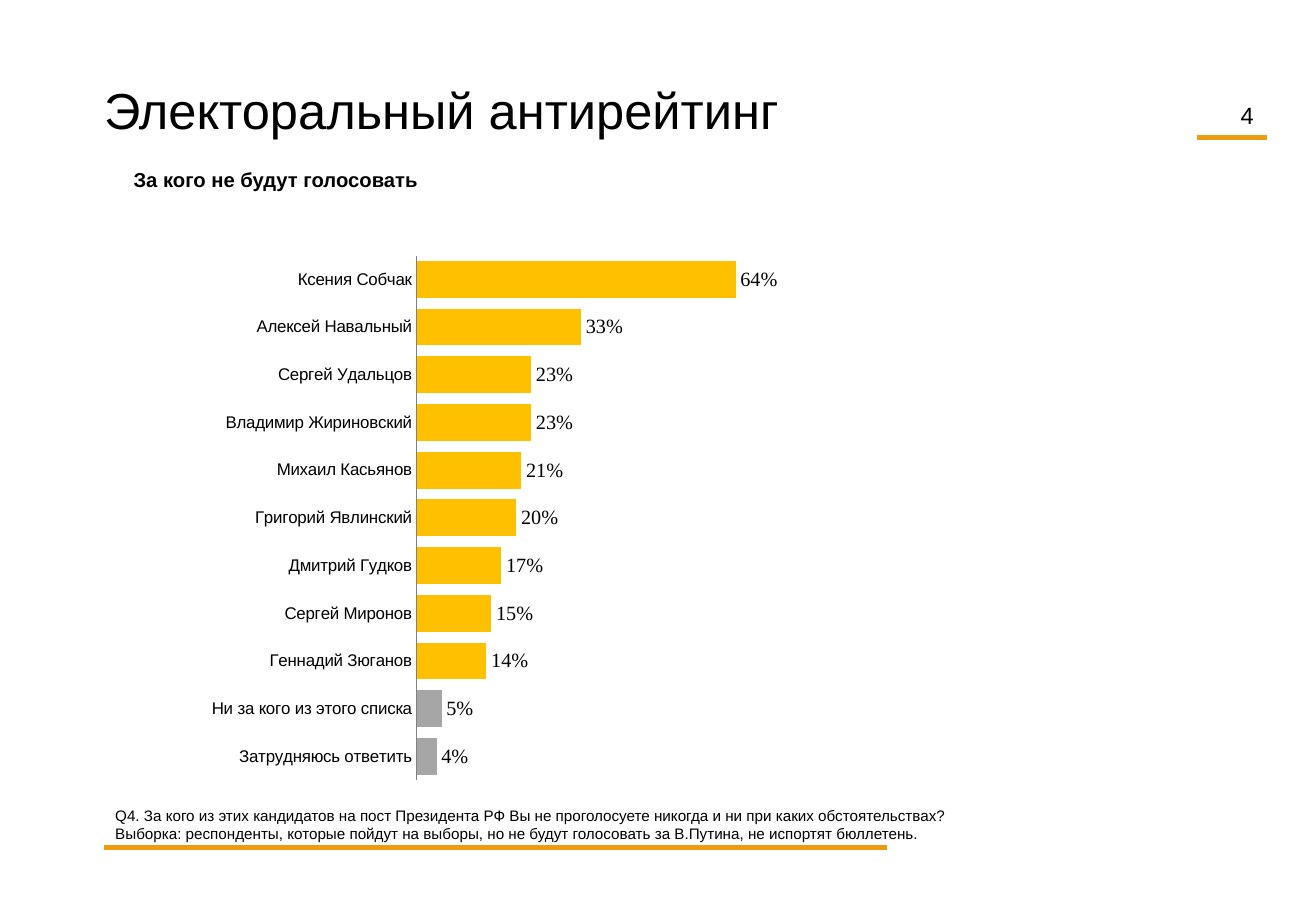
import lxml.etree
import pptx
import pptx.chart.data
import pptx.dml.color
import pptx.enum.chart
import pptx.enum.shapes
import pptx.enum.text
import pptx.oxml
import pptx.oxml.ns
import pptx.util

Cm = pptx.util.Cm
Pt = pptx.util.Pt
RGBColor = pptx.dml.color.RGBColor
Align = pptx.enum.text.PP_ALIGN

BLACK = RGBColor(0x00, 0x00, 0x00)
ORANGE = RGBColor(0xEF, 0x9B, 0x10)
AMBER = RGBColor(0xFF, 0xC0, 0x00)
BAR_GREY = RGBColor(0xA6, 0xA6, 0xA6)
AXIS_GREY = RGBColor(0x80, 0x80, 0x80)

ANTI_RATING = {
    "Ксения Собчак": 0.64,
    "Алексей Навальный": 0.33,
    "Сергей Удальцов": 0.23,
    "Владимир Жириновский": 0.23,
    "Михаил Касьянов": 0.21,
    "Григорий Явлинский": 0.20,
    "Дмитрий Гудков": 0.17,
    "Сергей Миронов": 0.15,
    "Геннадий Зюганов": 0.14,
    "Ни за кого из этого списка": 0.05,
    "Затрудняюсь ответить": 0.04,
}
NO_CANDIDATE_ROWS = 2
PERCENT = "#,##0%"


class SlideBuilder:
    text_font = "Arial"
    number_font = "Times New Roman"

    def __init__(self, presentation):
        self.slide = presentation.slides.add_slide(presentation.slide_layouts[6])

    def rule(self, left, right, y):
        """Horizontal orange rule."""
        line = self.slide.shapes.add_connector(
            pptx.enum.shapes.MSO_CONNECTOR.STRAIGHT, Cm(left), Cm(y), Cm(right), Cm(y))
        line.line.color.rgb = ORANGE
        line.line.width = Pt(3)
        lxml.etree.SubElement(line._element.spPr, pptx.oxml.ns.qn("a:effectLst"))

    def text(self, box, lines, size, align=Align.LEFT, bold=False, side_inset=0.25, grow=True):
        """Text box with one paragraph per line."""
        shape = self.slide.shapes.add_textbox(*map(Cm, box))
        frame = shape.text_frame
        frame.word_wrap = True
        frame.margin_left = frame.margin_right = Cm(side_inset)
        if grow:
            frame.auto_size = pptx.enum.text.MSO_AUTO_SIZE.SHAPE_TO_FIT_TEXT
        for index, line in enumerate(lines):
            paragraph = frame.add_paragraph() if index else frame.paragraphs[0]
            paragraph.alignment = align
            run = paragraph.add_run()
            run.text = line
            self.style_font(run.font, self.text_font, size)
            run.font.bold = bold

    def style_font(self, font, name, size):
        font.name = name
        font.size = Pt(size)
        font.color.rgb = BLACK

    def bar_chart(self, box, values, grey_rows):
        """Horizontal bars, the last rows in grey."""
        data = pptx.chart.data.CategoryChartData(number_format=PERCENT)
        data.categories = list(values)
        data.add_series("Series 1", list(values.values()))
        chart = self.slide.shapes.add_chart(
            pptx.enum.chart.XL_CHART_TYPE.BAR_CLUSTERED, *map(Cm, box), data).chart
        chart.has_legend = False
        chart.has_title = False
        self.style_font(chart.font, self.number_font, 18)

        # Axes
        names = chart.category_axis
        names.reverse_order = True
        names.major_tick_mark = pptx.enum.chart.XL_TICK_MARK.NONE
        names.format.line.color.rgb = AXIS_GREY
        names.format.line.width = Pt(0.75)
        self.style_font(names.tick_labels.font, self.text_font, 10)
        shares = chart.value_axis
        shares.minimum_scale = 0
        shares.maximum_scale = 1.1
        shares.has_major_gridlines = False
        shares.visible = False

        # Bars and labels
        plot = chart.plots[0]
        plot.gap_width = 30
        plot.vary_by_categories = False
        series = plot.series[0]
        series.format.fill.solid()
        series.format.fill.fore_color.rgb = AMBER
        for row in range(len(values) - grey_rows, len(values)):
            fill = series.points[row].format.fill
            fill.solid()
            fill.fore_color.rgb = BAR_GREY
        labels = series.data_labels
        labels.show_value = True
        labels.number_format = PERCENT
        labels.number_format_is_linked = False
        labels.position = pptx.enum.chart.XL_LABEL_POSITION.OUTSIDE_END
        self.style_font(labels.font, self.number_font, 12)
        self.place_plot(chart, x=0.37, y=0, w=0.63, h=1)

    def place_plot(self, chart, **fractions):
        """Fix the inner plot area as fractions of the chart."""
        area = chart._chartSpace.chart.plotArea
        for layout in area.findall(pptx.oxml.ns.qn("c:layout")):
            area.remove(layout)
        settings = {"layoutTarget": "inner", "xMode": "edge", "yMode": "edge", **fractions}
        items = "".join(f'<c:{key} val="{value}"/>' for key, value in settings.items())
        area.insert(0, pptx.oxml.parse_xml(
            f'<c:layout {pptx.oxml.ns.nsdecls("c")}>'
            f"<c:manualLayout>{items}</c:manualLayout></c:layout>"))


def main():
    presentation = pptx.Presentation()
    presentation.slide_width = Cm(27.51)
    presentation.slide_height = Cm(19.05)
    builder = SlideBuilder(presentation)

    # Rules under the footnote and the page number
    builder.rule(2.18, 18.54, 17.73)
    builder.rule(25.02, 26.49, 2.87)

    # Chart
    builder.bar_chart((1.98, 5.33, 18.19, 11), ANTI_RATING, NO_CANDIDATE_ROWS)

    # Headings and page number
    builder.text((2.18, 1.52, 22.81, 1.55), ["Электоральный антирейтинг"], 30, side_inset=0)
    builder.text((24.99, 1.98, 1.47, 0.74), ["4"], 14, Align.RIGHT, grow=False)
    builder.text((1.17, 3.38, 9.19, 0.76), ["За кого не будут голосовать"], 12,
                 Align.CENTER, bold=True)

    # Footnote
    builder.text((2.16, 16.74, 24.41, 1.02), [
        "Q4. За кого из этих кандидатов на пост Президента РФ Вы не проголосуете "
        "никогда и ни при каких обстоятельствах?",
        "Выборка: респонденты, которые пойдут на выборы, но не будут голосовать "
        "за В.Путина, не испортят бюллетень.",
    ], 9, Align.JUSTIFY)

    presentation.save("out.pptx")


if __name__ == "__main__":
    main()
